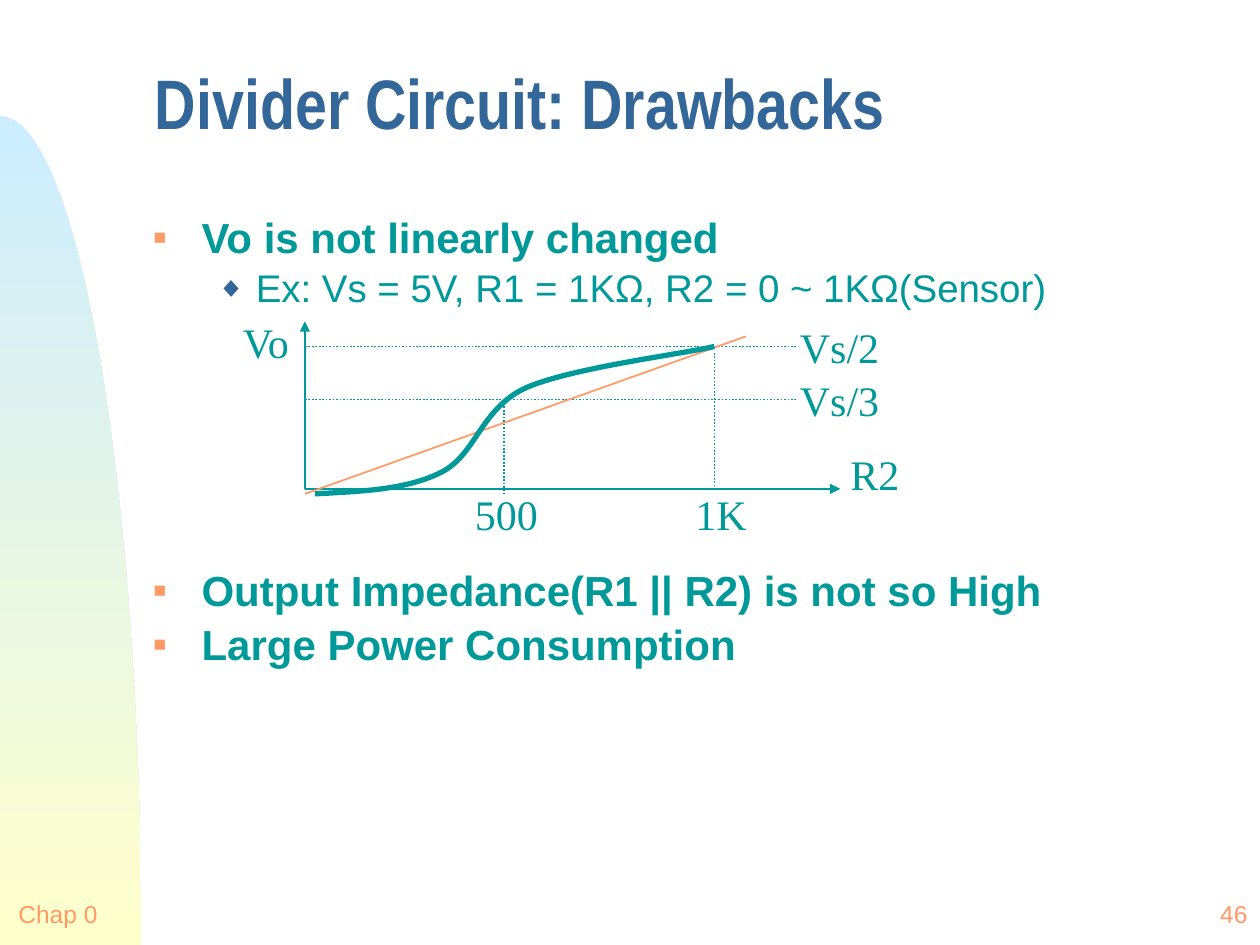
from dataclasses import dataclass

from lxml import etree
from pptx import Presentation
from pptx import util as u
from pptx.dml.color import RGBColor
from pptx.enum import dml, shapes, text
from pptx.oxml import ns


@dataclass(frozen=True)
class Theme:
    """Colours, fonts and type sizes of the slide."""
    teal: str = "009999"
    blue: str = "336699"
    orange: str = "FF9966"
    sky: str = "CCECFF"
    cream: str = "FFFFCC"
    sans: str = "Arial"
    narrow: str = "Arial Narrow"
    serif: str = "Times New Roman"
    title_pt: int = 40
    point_pt: int = 24
    example_pt: int = 22
    footer_pt: int = 14


THEME = Theme()
ORIGIN_X, AXIS_Y, CURVE_START_Y = 2.42, 3.88, 3.92
HALF_X, FULL_X, GUIDE_END_X = 4, 5.67, 6.33
FULL_Y, HALF_Y = 2.75, 3.17


def rgb(colour):
    """Turn a hex string into a colour."""
    return RGBColor.from_string(colour)


def add_run(paragraph, words, font, size, colour, bold=False):
    """Append one formatted run."""
    run = paragraph.add_run()
    run.text = words
    run.font.name, run.font.size, run.font.bold = font, u.Pt(size), bold
    run.font.color.rgb = rgb(colour)


def place(shape, left, top, width, height):
    """Set the box of a shape in inches."""
    shape.left, shape.top = u.Inches(left), u.Inches(top)
    shape.width, shape.height = u.Inches(width), u.Inches(height)


def add_child(parent, tag, **attributes):
    """Append a DrawingML element."""
    etree.SubElement(parent, ns.qn(tag), attributes)


def add_title(slide, words):
    """Fill the title placeholder."""
    title = slide.shapes.title
    place(title, 1.13, 0.36, 8.62, 1.05)
    frame = title.text_frame
    frame.auto_size = text.MSO_AUTO_SIZE.NONE
    frame.vertical_anchor = text.MSO_ANCHOR.MIDDLE
    heading = frame.paragraphs[0]
    heading.alignment = text.PP_ALIGN.LEFT
    heading.line_spacing = 0.7
    add_run(heading, words, THEME.narrow, THEME.title_pt, THEME.blue, True)


def add_point(paragraph, words, level, space_before):
    """Write one bulleted line of the list."""
    margin, hanging, symbol, tint, percent, size = (
        (0.38, 0.38, "■", THEME.orange, 50, THEME.point_pt),
        (0.81, 0.31, "◆", THEME.blue, 75, THEME.example_pt),
    )[level]
    paragraph.level = level
    paragraph.line_spacing = 0.9
    paragraph.space_before = u.Pt(space_before)
    properties = paragraph._p.get_or_add_pPr()
    properties.set("marL", str(u.Inches(margin)))
    properties.set("indent", str(-u.Inches(hanging)))
    bullet_colour = etree.SubElement(properties, ns.qn("a:buClr"))
    add_child(bullet_colour, "a:srgbClr", val=tint)
    add_child(properties, "a:buSzPct", val=str(percent * 1000))
    add_child(properties, "a:buChar", char=symbol)
    add_run(paragraph, words, THEME.sans, size, THEME.teal, level == 0)


def add_points(slide, points):
    """Fill the body placeholder with the list."""
    body = slide.placeholders[1]
    place(body, 1.12, 1.67, 8.62, 4.88)
    frame = body.text_frame
    frame.auto_size = text.MSO_AUTO_SIZE.NONE
    for index, point in enumerate(points):
        paragraph = frame.add_paragraph() if index else frame.paragraphs[0]
        add_point(paragraph, *point)


def add_label(slide, words, box, font=THEME.serif, size=THEME.point_pt,
              colour=THEME.teal, align=text.PP_ALIGN.LEFT,
              anchor=text.MSO_ANCHOR.TOP):
    """Add a single-line text box."""
    label = slide.shapes.add_textbox(*map(u.Inches, box))
    frame = label.text_frame
    frame.word_wrap = False
    frame.vertical_anchor = anchor
    frame.paragraphs[0].alignment = align
    add_run(frame.paragraphs[0], words, font, size, colour)


def add_footer(slide, words, box, align):
    """Add a footer label."""
    add_label(slide, words, box, THEME.sans, THEME.footer_pt, THEME.orange,
              align, text.MSO_ANCHOR.MIDDLE)


def add_line(slide, start, end, colour=THEME.teal, dotted=False, arrow=False):
    """Add a thin straight line."""
    line = slide.shapes.add_connector(
        shapes.MSO_CONNECTOR.STRAIGHT, *map(u.Inches, (*start, *end)))
    line.line.color.rgb = rgb(colour)
    line.line.width = u.Pt(1)
    if dotted:
        line.line.dash_style = dml.MSO_LINE.ROUND_DOT
    if arrow:
        add_child(line.line._get_or_add_ln(), "a:tailEnd", type="triangle")
    add_child(line._element.spPr, "a:effectLst")


def bezier(start, first, second, end, steps=32):
    """Sample a cubic curve, leaving out its start."""
    samples = []
    for step in range(1, steps + 1):
        t = step / steps
        weights = ((1 - t) ** 3, 3 * t * (1 - t) ** 2, 3 * t * t * (1 - t), t ** 3)
        samples.append(tuple(
            sum(weight * value for weight, value in zip(weights, values))
            for values in zip(start, first, second, end)))
    return samples


def add_outline(slide, points, close):
    """Draw a freeform through points given in inches."""
    vertices = [(u.Inches(x), u.Inches(y)) for x, y in points]
    builder = slide.shapes.build_freeform(*vertices[0])
    builder.add_line_segments(vertices[1:], close=close)
    outline = builder.convert_to_shape()
    outline.shadow.inherit = False
    return outline


def add_arch(slide):
    """Draw the shaded arch along the left edge."""
    top, foot = (0, 0.92), (1.12, 7.5)
    edge = bezier(top, (0.62, 0.92), (1.12, 3.87), foot)
    arch = add_outline(slide, [top, *edge, (0, 7.5)], True)
    arch.line.fill.background()
    arch.fill.gradient()
    arch.fill.gradient_angle = 270
    for stop, position, colour in zip(
            arch.fill.gradient_stops, (0, 1), (THEME.sky, THEME.cream)):
        stop.position, stop.color.rgb = position, rgb(colour)


def add_response_curve(slide):
    """Draw output voltage against sensor resistance."""
    knots = [(2.5, CURVE_START_Y), (3.5, 3.75), (4.17, 3.08), (FULL_X, FULL_Y)]
    handles = [((2.86, 3.9), (3.22, 3.89)), ((3.78, 3.61), (3.81, 3.25)),
               ((4.53, 2.92), (5.42, 2.81))]
    points = knots[:1]
    for start, (first, second), end in zip(knots, handles, knots[1:]):
        points += bezier(start, first, second, end)
    curve = add_outline(slide, points, False)
    curve.fill.background()
    curve.line.color.rgb = rgb(THEME.teal)
    curve.line.width = u.Pt(3)


def add_graph(slide):
    """Draw axes, guides, labels and both response lines."""
    origin = (ORIGIN_X, AXIS_Y)
    for tip in ((6.67, AXIS_Y), (ORIGIN_X, 2.55)):
        add_line(slide, origin, tip, arrow=True)
    for x, top, bottom in ((FULL_X, 2.8, AXIS_Y), (HALF_X, HALF_Y, CURVE_START_Y)):
        add_line(slide, (x, top), (x, bottom), dotted=True)
    for y in (FULL_Y, HALF_Y):
        add_line(slide, (ORIGIN_X, y), (GUIDE_END_X, y), dotted=True)
    add_line(slide, (ORIGIN_X, CURVE_START_Y), (5.92, 2.67), THEME.orange)
    for words, left, top, width in (
            ("R2", 6.65, 3.51, 0.59), ("Vo", 1.83, 2.46, 0.61),
            ("1K", 5.42, 3.83, 0.61), ("500", 3.67, 3.83, 0.7),
            ("Vs/2", 6.25, 2.5, 0.83), ("Vs/3", 6.25, 2.92, 0.83)):
        add_label(slide, words, (left, top, width, 0.5))
    add_response_curve(slide)


def main():
    """Build and save the slide."""
    deck = Presentation()
    deck.slide_width, deck.slide_height = u.Inches(10), u.Inches(7.5)
    slide = deck.slides.add_slide(deck.slide_layouts[1])
    add_arch(slide)
    add_footer(slide, "Chap 0", (0, 7, 0.92, 0.5), text.PP_ALIGN.CENTER)
    add_footer(slide, "46", (9.3, 7, 0.7, 0.5), text.PP_ALIGN.RIGHT)
    add_title(slide, "Divider Circuit: Drawbacks")
    add_points(slide, (
        ("Vo is not linearly changed", 0, 4.8),
        ("Ex: Vs = 5V, R1 = 1KΩ, R2 = 0 ~ 1KΩ(Sensor)", 1, 4.4),
        ("Output Impedance(R1 || R2) is not so High", 0, 148),
        ("Large Power Consumption", 0, 4.8)))
    add_graph(slide)
    deck.save("out.pptx")


if __name__ == "__main__":
    main()
